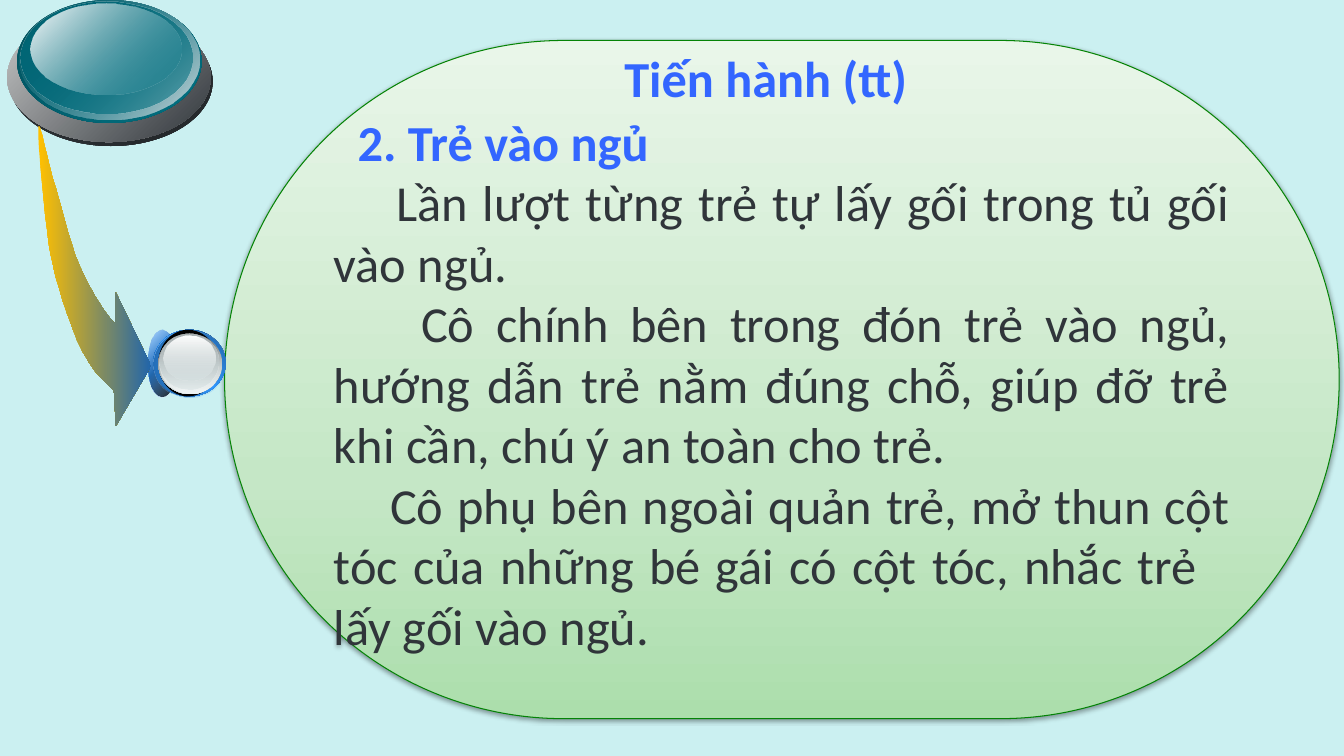
from lxml import etree
from pptx import Presentation
from pptx import util as u
from pptx.dml.color import RGBColor
from pptx.enum import shapes, text
from pptx.oxml.ns import qn

BACKGROUND = RGBColor(0xCB, 0xF0, 0xF1)
BLUE = RGBColor(0x33, 0x66, 0xFF)
DARK = RGBColor(0x30, 0x35, 0x3A)
GREEN = RGBColor(0x04, 0x83, 0x06)
BLACK = RGBColor(0, 0, 0)
WHITE = RGBColor(0xFF, 0xFF, 0xFF)
CHARCOAL = RGBColor(0x23, 0x27, 0x2A)
SILVER = RGBColor(0xC7, 0xC8, 0xC8)
DEEP_TEAL = RGBColor(0x01, 0x51, 0x5D)
MID_TEAL = RGBColor(0x02, 0x66, 0x75)
TEAL = RGBColor(0x02, 0x71, 0x82)
MIST = RGBColor(0xD4, 0xDB, 0xDE)
SKY = RGBColor(0x33, 0x99, 0xFF)
NAVY = RGBColor(0x1C, 0x53, 0x8A)
OCEAN = RGBColor(0x20, 0x61, 0xA2)
STEEL = RGBColor(0x63, 0x68, 0x69)
ASH = RGBColor(0xAA, 0xB2, 0xB3)
PEARL = RGBColor(0xD6, 0xE1, 0xE2)
FROST = RGBColor(0xF1, 0xF5, 0xF5)
AMBER = RGBColor(0xFF, 0xC0, 0x00)
ARROW_BLUE = RGBColor(0x21, 0x65, 0xAA)
LEAF = RGBColor(0xAC, 0xDE, 0xAC)
LIGHT_LEAF = RGBColor(0xC5, 0xE7, 0xC6)
PALE_LEAF = RGBColor(0xE9, 0xF6, 0xE9)


def paint(sp, angle, *stops):
    """Gradient fill without line or shadow; a stop is (position, colour, opacity), in percent."""
    sp.shadow.inherit = False
    sp.line.fill.background()
    sp.fill.gradient()
    grad = sp.element.spPr.find(qn("a:gradFill"))
    grad.clear()
    gs_list = etree.SubElement(grad, qn("a:gsLst"))
    for pos, colour, opacity in stops:
        gs = etree.SubElement(gs_list, qn("a:gs"), pos=str(pos * 1000))
        clr = etree.SubElement(gs, qn("a:srgbClr"), val=str(colour))
        if opacity < 100:
            etree.SubElement(clr, qn("a:alpha"), val=str(opacity * 1000))
    etree.SubElement(grad, qn("a:lin"), ang=str(angle * 60000), scaled="0")


def write(p, content, colour=DARK, bold=False, align=text.PP_ALIGN.JUSTIFY, indent=0):
    p.alignment = align
    p.space_before = u.Pt(0)
    p.line_spacing = 1.0
    p._p.get_or_add_pPr().set("indent", str(u.Cm(indent)))
    r = p.add_run()
    r.text = content
    r.font.name, r.font.size, r.font.bold = "Calibri", u.Pt(36), bold
    r.font.color.rgb = colour


prs = Presentation()
prs.slide_width, prs.slide_height = u.Cm(33.87), u.Cm(19.05)
s = prs.slides.add_slide(prs.slide_layouts[5])
s.background.fill.solid()
s.background.fill.fore_color.rgb = BACKGROUND

# Layers of the two buttons, back to front: left, top, width, height, angle, stops
teal_button = [
    (0.23, 0.43, 5.13, 3.25, 45, [(0, DARK, 100), (100, CHARCOAL, 100)]),
    (0.18, 0.33, 5.13, 3.25, 45, [(0, SILVER, 100), (100, DARK, 100)]),
    (0.43, 0, 4.65, 3.1, 45, [(0, DEEP_TEAL, 100), (100, TEAL, 100)]),
    (0.48, 0, 4.55, 3.02, 45, [(0, TEAL, 0), (100, MIST, 100)]),
    (0.53, 0.03, 4.32, 2.82, 45, [(0, MID_TEAL, 100), (100, TEAL, 48)]),
    (0.76, 0.1, 3.81, 2.29, 45, [(0, WHITE, 100), (100, TEAL, 38)]),
]
small_knob = [
    (3.73, 8.33, 0.71, 1.68, 45, [(0, WHITE, 100), (50, SKY, 100), (100, WHITE, 100)]),
    (3.73, 8.31, 0.71, 1.68, 45, [(0, SKY, 32), (100, BLACK, 90)]),
    (3.86, 8.31, 1.83, 1.68, 315, [(0, NAVY, 100), (50, SKY, 100), (100, NAVY, 100)]),
    (3.86, 8.33, 1.83, 1.68, 45, [(0, OCEAN, 100), (100, SKY, 0)]),
    (3.99, 8.31, 1.5, 1.68, 0, []),
    (3.99, 8.41, 1.6, 1.52, 90, [(0, STEEL, 100), (100, PEARL, 100)]),
    (4.01, 8.41, 1.57, 1.5, 90, [(0, PEARL, 0), (100, FROST, 100)]),
    (4.01, 8.41, 1.5, 1.4, 90, [(0, ASH, 100), (100, PEARL, 48)]),
    (4.11, 8.46, 1.32, 1.14, 90, [(0, WHITE, 100), (100, PEARL, 38)]),
]

# Green panel
panel = s.shapes.add_shape(shapes.MSO_SHAPE.ROUNDED_RECTANGLE,
                           u.Cm(5.66), u.Cm(1.02), u.Cm(28.09), u.Cm(17.09))
panel.adjustments[0] = 0.5
paint(panel, 270, (0, LEAF, 100), (35, LIGHT_LEAF, 100), (100, PALE_LEAF, 100))
panel.line.color.rgb = GREEN
panel.line.width = u.Pt(0.75)
shadow = etree.SubElement(panel.element.spPr.find(qn("a:effectLst")), qn("a:outerShdw"),
                          blurRad=str(u.Pt(3.1)), dist=str(u.Pt(1.6)),
                          dir="5400000", rotWithShape="0")
clr = etree.SubElement(shadow, qn("a:srgbClr"), val=str(BLACK))
etree.SubElement(clr, qn("a:alpha"), val="38000")

# Heading and steps
tf = panel.text_frame
tf.word_wrap = True
tf.vertical_anchor = text.MSO_ANCHOR.MIDDLE
tf.margin_top, tf.margin_bottom = u.Cm(0.3), u.Cm(0.13)
write(tf.paragraphs[0], "2. Trẻ vào ngủ", colour=BLUE, bold=True, indent=0.6)
for content, indent in [
    ("Lần lượt từng trẻ tự lấy gối trong tủ gối vào ngủ.", 1.57),
    ("Cô chính bên trong đón trẻ vào ngủ, hướng dẫn trẻ nằm đúng chỗ, "
     "giúp đỡ trẻ khi cần, chú ý an toàn cho trẻ.", 2.2),
    ("Cô phụ bên ngoài quản trẻ, mở thun cột tóc của những bé gái có cột tóc, "
     "nhắc trẻ \tlấy gối vào ngủ.", 1.42),
]:
    write(tf.add_paragraph(), content, indent=indent)

# Title, brought in front of the panel
title = s.shapes.title
title.left, title.top, title.width, title.height = u.Cm(11.7), u.Cm(1.2), u.Cm(15.2), u.Cm(1.52)
tf = title.text_frame
tf.margin_top = tf.margin_bottom = 0
tf.vertical_anchor = text.MSO_ANCHOR.MIDDLE
write(tf.paragraphs[0], "Tiến hành (tt)", colour=BLUE, bold=True, align=text.PP_ALIGN.CENTER)
panel.element.addnext(title.element)

# Buttons
for layers in (teal_button, small_knob):
    group = s.shapes.add_group_shape()
    for left, top, width, height, angle, stops in layers:
        sp = group.shapes.add_shape(shapes.MSO_SHAPE.OVAL,
                                    u.Cm(left), u.Cm(top), u.Cm(width), u.Cm(height))
        if stops:
            paint(sp, angle, *stops)
        else:
            sp.shadow.inherit = False
            sp.line.fill.background()
            sp.fill.solid()
            sp.fill.fore_color.rgb = BLACK

# Curved arrow in hundredths of a centimetre: single points are corners, triples are Bézier curves
segments = [
    [(94, 351), (112, 538), (124, 622)],
    [(140, 709), (165, 780), (185, 833)],
    [(203, 884), (224, 912), (239, 935)],
    [(272, 970)], [(287, 983)], [(292, 1074)], [(381, 922)], [(292, 737)], [(290, 815)],
    [(274, 805), (226, 729), (201, 671)],
    [(175, 612), (155, 518), (137, 462)],
    [(119, 404), (97, 284), (97, 325)],
]
STEPS = 12
outline = [(97, 325)]
for seg in segments:
    if len(seg) == 1:
        outline += seg
        continue
    curve = [outline[-1]] + seg
    for i in range(1, STEPS + 1):
        t = i / STEPS
        weights = ((1 - t) ** 3, 3 * t * (1 - t) ** 2, 3 * t ** 2 * (1 - t), t ** 3)
        outline.append(tuple(sum(w * pt[axis] for w, pt in zip(weights, curve))
                             for axis in (0, 1)))
builder = s.shapes.build_freeform(*outline[0], scale=u.Cm(0.01))
builder.add_line_segments(outline[1:], close=True)
paint(builder.convert_to_shape(), 0, (0, AMBER, 100), (100, ARROW_BLUE, 100))

prs.save("out.pptx")
